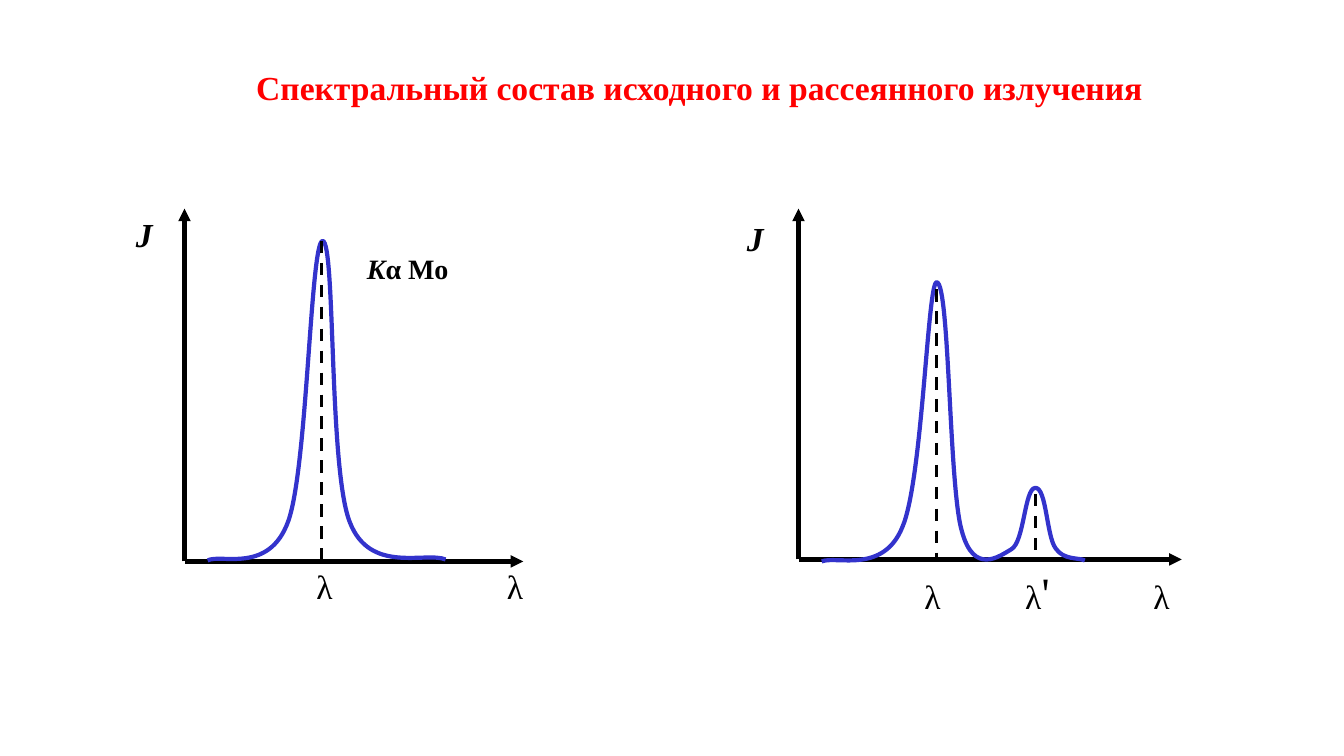
from lxml import etree
from pptx import Presentation
from pptx.dml.color import RGBColor
from pptx.enum.dml import MSO_LINE_DASH_STYLE as DASH
from pptx.enum.shapes import MSO_CONNECTOR as CONN
from pptx.enum.text import MSO_ANCHOR as ANCHOR, MSO_AUTO_SIZE as AUTO, PP_ALIGN as ALIGN
from pptx.oxml.ns import qn
from pptx.util import Inches, Pt

BLACK, RED, BLUE = "000000", "FF0000", "3333CC"
FONT = "Times New Roman"

# Each curve is a start point followed by cubic segments (two controls, end).
SOURCE_CURVE = [
    (2.06, 5.56),
    (2.19, 5.49), (2.67, 5.7), (2.86, 5.17),
    (3.05, 4.64), (3.08, 2.4), (3.2, 2.39),
    (3.33, 2.39), (3.26, 4.65), (3.47, 5.18),
    (3.67, 5.7), (4.22, 5.47), (4.42, 5.55),
]
SCATTERED_CURVE = [
    (8.15, 5.57),
    (8.29, 5.51), (8.76, 5.7), (8.95, 5.23),
    (9.15, 4.77), (9.2, 2.8), (9.29, 2.8),
    (9.42, 2.8), (9.41, 4.83), (9.54, 5.27),
    (9.66, 5.71), (9.91, 5.52), (10.03, 5.45),
    (10.16, 5.38), (10.16, 4.84), (10.27, 4.84),
    (10.38, 4.84), (10.38, 5.32), (10.47, 5.44),
    (10.55, 5.56), (10.7, 5.53), (10.76, 5.56),
]


def rgb(color):
    return RGBColor.from_string(color)


def add_run(p, text, size=24, color=BLACK, bold=False, italic=False):
    r = p.add_run()
    r.text = text
    f = r.font
    f.name, f.size, f.bold, f.italic = FONT, Pt(size), bold, italic
    f.color.rgb = rgb(color)


def add_label(g, x, y, w, h, *runs, tabs=()):
    """Add a text box; each run is (text, format keywords)."""
    sp = g.shapes.add_textbox(Inches(x), Inches(y), Inches(w), Inches(h))
    tf = sp.text_frame
    tf.word_wrap = True
    tf.auto_size = AUTO.SHAPE_TO_FIT_TEXT
    p = tf.paragraphs[0]
    if tabs:
        stops = etree.SubElement(p._p.get_or_add_pPr(), qn("a:tabLst"))
        for pos in tabs:
            etree.SubElement(stops, qn("a:tab"), pos=str(Inches(pos)), algn="l")
    for text, fmt in runs:
        add_run(p, text, **fmt)


def add_title(s, text):
    sp = s.shapes.title
    sp.left, sp.top = Inches(2.44), Inches(0.61)
    sp.width, sp.height = Inches(9.74), Inches(0.5)
    tf = sp.text_frame
    tf.word_wrap = True
    tf.auto_size = AUTO.SHAPE_TO_FIT_TEXT
    tf.vertical_anchor = ANCHOR.TOP
    p = tf.paragraphs[0]
    p.alignment = ALIGN.LEFT
    add_run(p, text, color=RED, bold=True)


def add_line(g, x1, y1, x2, y2, width):
    sp = g.shapes.add_connector(
        CONN.STRAIGHT, Inches(x1), Inches(y1), Inches(x2), Inches(y2))
    sp.line.color.rgb = rgb(BLACK)
    sp.line.width = Pt(width)
    etree.SubElement(sp._element.spPr, qn("a:effectLst"))
    return sp


def add_axes(g, x, y, right, top):
    for end_x, end_y in ((right, y), (x, top)):
        sp = add_line(g, x, y, end_x, end_y, 3)
        etree.SubElement(sp.line._get_or_add_ln(), qn("a:tailEnd"), type="triangle")


def add_peak_marker(g, x, top, bottom):
    add_line(g, x, top, x, bottom, 2.25).line.dash_style = DASH.DASH


def add_curve(g, points):
    """Outline all points, then turn every three straight steps into a cubic."""
    start, *rest = [(Inches(x), Inches(y)) for x, y in points]
    builder = g.shapes.build_freeform(*start)
    builder.add_line_segments(rest, close=False)
    sp = builder.convert_to_shape()
    steps = list(sp._element.iter(qn("a:lnTo")))
    outline = steps[0].getparent()
    for i in range(0, len(steps), 3):
        cubic = etree.SubElement(outline, qn("a:cubicBezTo"))
        for step in steps[i:i + 3]:
            cubic.append(step[0])
            outline.remove(step)
    sp.shadow.inherit = False
    sp.fill.background()
    sp.line.color.rgb = rgb(BLUE)
    sp.line.width = Pt(3)


def add_intensity_label(g, x, y):
    add_label(g, x, y, 0.48, 0.5, ("J", dict(bold=True, italic=True)))


def add_source_spectrum(g):
    add_axes(g, 1.83, 5.57, 5.19, 2.07)
    add_curve(g, SOURCE_CURVE)
    add_peak_marker(g, 3.19, 2.39, 5.57)
    add_intensity_label(g, 1.25, 2.07)
    add_label(g, 3.54, 2.45, 1.51, 0.43,
              ("K", dict(size=20, bold=True, italic=True)),
              ("α Мо", dict(size=20, bold=True)))
    for x, w in ((3.04, 0.5), (4.93, 0.46)):
        add_label(g, x, 5.57, w, 0.5, ("λ", {}))


def add_scattered_spectrum(g):
    add_axes(g, 7.92, 5.55, 11.72, 2.07)
    add_curve(g, SCATTERED_CURVE)
    add_label(g, 9.07, 5.55, 2.89, 0.63,
              ("λ\tλ", {}), ("'", dict(size=32)), ("\tλ", {}), tabs=(1, 2.27))
    add_peak_marker(g, 9.29, 2.87, 5.55)
    add_peak_marker(g, 10.27, 4.9, 5.55)
    add_intensity_label(g, 7.31, 2.11)


def main():
    prs = Presentation()
    prs.slide_width, prs.slide_height = Inches(13.33), Inches(7.5)
    s = prs.slides.add_slide(prs.slide_layouts[5])
    add_title(s, "Спектральный состав исходного и рассеянного излучения")
    for add_spectrum in (add_scattered_spectrum, add_source_spectrum):
        add_spectrum(s.shapes.add_group_shape())
    prs.save("out.pptx")


if __name__ == "__main__":
    main()
